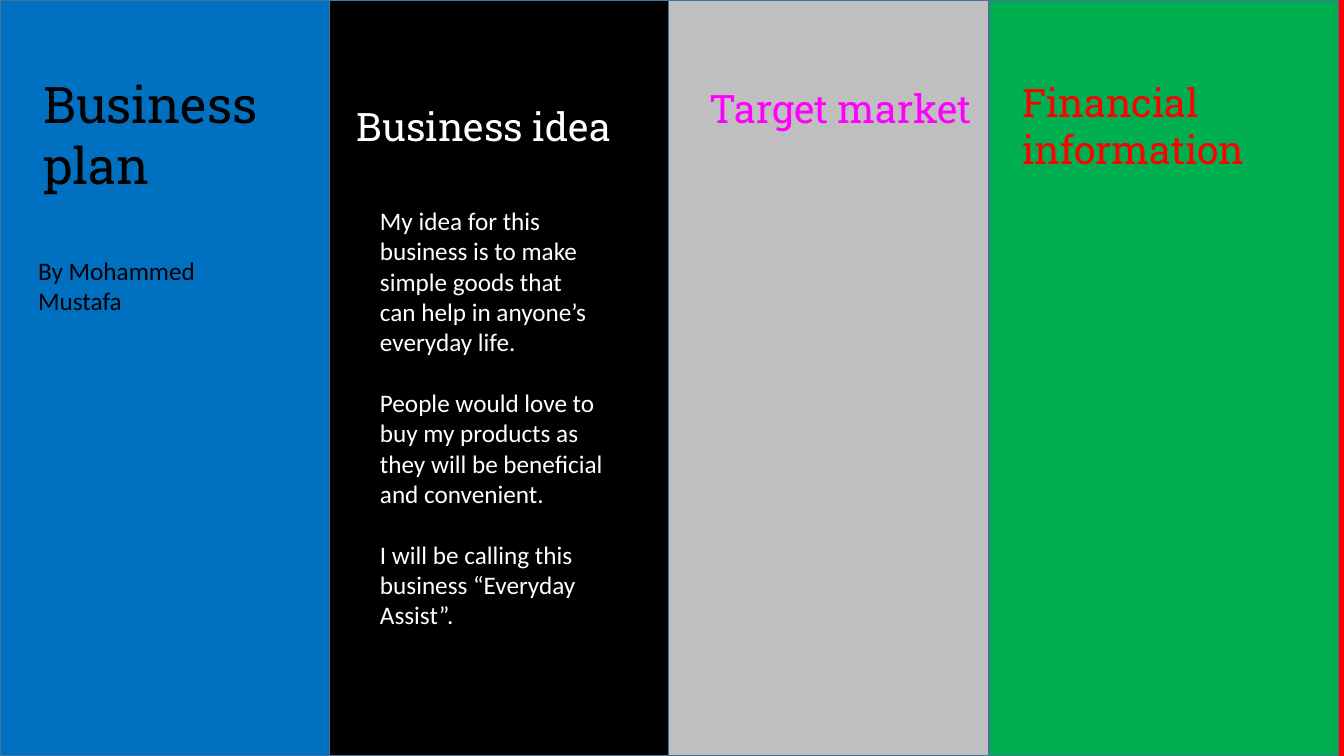
import pptx
import pptx.util
import pptx.dml.color
import pptx.enum.shapes
from dataclasses import dataclass

Inches = pptx.util.Inches
Pt = pptx.util.Pt


@dataclass(frozen=True)
class Theme:
    blue: str = "0070C0"
    black: str = "000000"
    grey: str = "BFBFBF"
    green: str = "00B050"
    red: str = "FF0000"
    pink: str = "FF00FF"
    white: str = "FFFFFF"
    edge: str = "43739E"
    head: str = "Roboto Slab"
    body: str = "Calibri"
    title: int = 36
    sub: int = 28
    text: int = 18
    gap: int = 22


T = Theme()
WIDE, HIGH = 13.33, 7.5

# Content: panels as (left edge, fill, outline)
PANELS = [
    (0, T.blue, T.edge),
    (3.27, T.black, T.edge),
    (6.63, T.grey, T.edge),
    (9.81, T.green, T.edge),
    (13.28, T.red, None),
]

# Headings as (text, box, size, colour)
HEADS = [
    ("Business plan", (0.33, 0.68, 2.48, 1.31), T.title, T.black),
    ("Business idea", (3.44, 0.97, 3.11, 0.57), T.sub, T.white),
    ("Target market", (6.94, 0.79, 2.89, 1.04), T.sub, T.pink),
    ("Financial information", (10.04, 0.73, 3.03, 1.04), T.sub, T.red),
]

# Body copy as (paragraphs, box, colour)
BODIES = [
    (["By Mohammed Mustafa"], (0.28, 2.48, 2.54, 0.71), T.black),
    ([
        "My idea for this business is to make simple goods that can help "
        "in anyone’s everyday life.",
        "People would love to buy my products as they will be beneficial "
        "and convenient.",
        "I will be calling this business “Everyday Assist”.",
    ], (3.67, 1.99, 2.41, 4.64), T.white),
]


def rgb(code):
    return pptx.dml.color.RGBColor.from_string(code)


def panel(slide, left, right, fill, edge):
    shape = slide.shapes.add_shape(
        pptx.enum.shapes.MSO_SHAPE.RECTANGLE,
        Inches(left), Inches(0), Inches(right - left), Inches(HIGH))
    shape.shadow.inherit = False
    shape.fill.solid()
    shape.fill.fore_color.rgb = rgb(fill)
    if edge:
        shape.line.color.rgb = rgb(edge)
        shape.line.width = Pt(1)
    else:
        shape.line.fill.background()


def write(slide, paras, box, font=T.body, size=T.text, color=T.black, gap=0):
    frame = slide.shapes.add_textbox(*map(Inches, box)).text_frame
    frame.word_wrap = True
    for i, text in enumerate(paras):
        para = frame.add_paragraph() if i else frame.paragraphs[0]
        if i:
            para.space_before = Pt(gap)
        run = para.add_run()
        run.text = text
        run.font.name = font
        run.font.size = Pt(size)
        run.font.color.rgb = rgb(color)


def main():
    deck = pptx.Presentation()
    deck.slide_width, deck.slide_height = Inches(WIDE), Inches(HIGH)
    slide = deck.slides.add_slide(deck.slide_layouts[6])

    # Panels: each runs to the start of the next
    ends = [left for left, _, _ in PANELS[1:]] + [WIDE]
    for (left, fill, edge), right in zip(PANELS, ends):
        panel(slide, left, right, fill, edge)

    # Headings
    for text, box, size, color in HEADS:
        write(slide, [text], box, font=T.head, size=size, color=color)

    # Body copy
    for paras, box, color in BODIES:
        write(slide, paras, box, color=color, gap=T.gap)

    deck.save("out.pptx")


if __name__ == "__main__":
    main()
